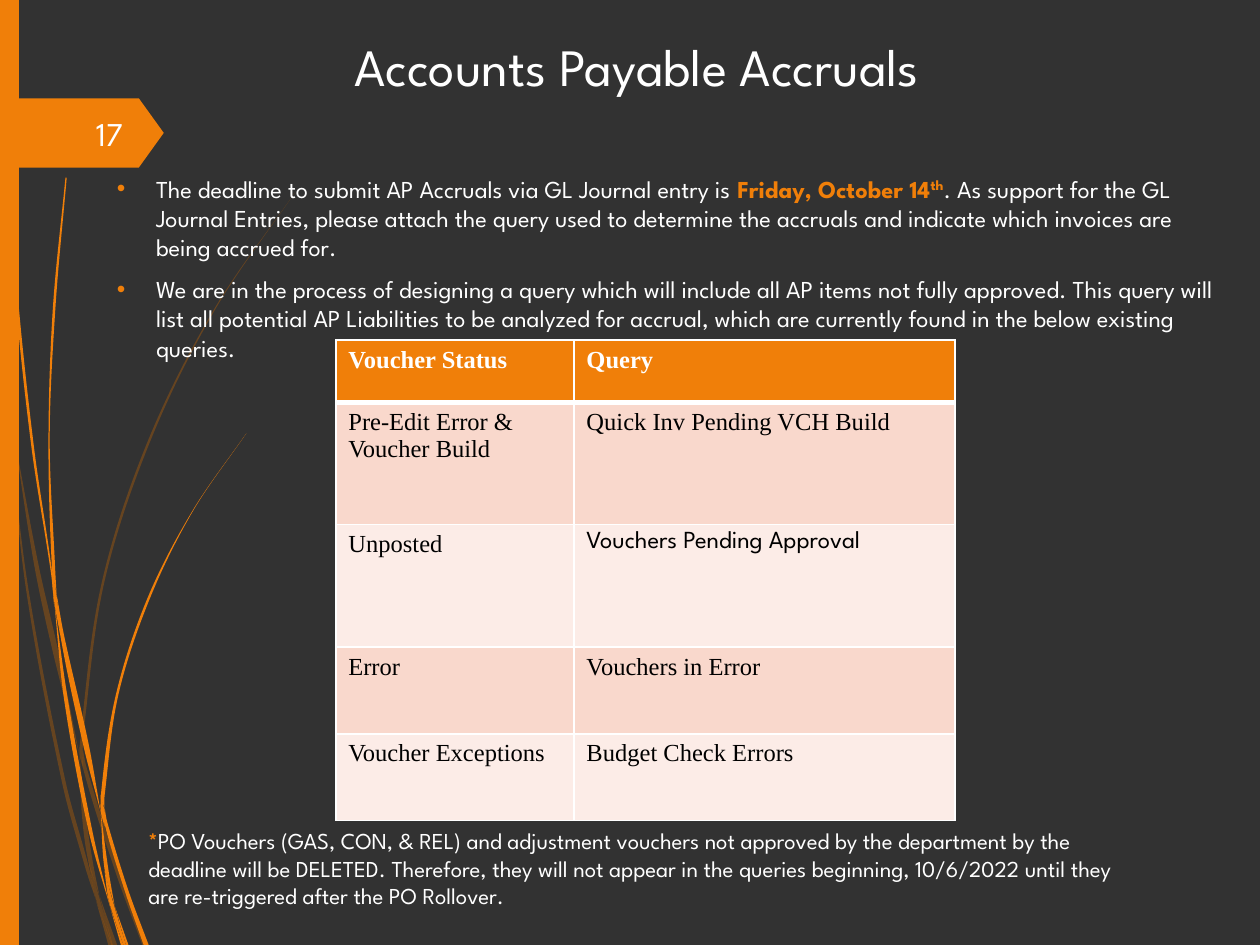
from lxml.etree import Element, SubElement
from pptx import Presentation
from pptx.dml.color import RGBColor
from pptx.enum.shapes import MSO_SHAPE
from pptx.enum.text import MSO_ANCHOR, PP_ALIGN
from pptx.oxml.ns import qn
from pptx.util import Inches, Pt

DARK = RGBColor(0x32, 0x32, 0x32)
ORANGE = RGBColor(0xF0, 0x7F, 0x09)
BROWN = RGBColor(0xB4, 0x5F, 0x07)
WHITE = RGBColor(0xFF, 0xFF, 0xFF)
BLACK = RGBColor(0x00, 0x00, 0x00)
ROSE = RGBColor(0xF9, 0xD8, 0xCC)
BLUSH = RGBColor(0xFC, 0xEC, 0xE7)
SANS, SERIF = "League Spartan", "Times New Roman"
COLS, ROWS = 100, 75

# Each blade of grass: column, row and width of points along its middle.
DIM_GRASS = [
    [(1.1, 34.5, 0), (2.9, 44.9, 0.35), (4.48, 52, 0.45), (6.3, 59.9, 0)],
    [(6.6, 59.6, 0), (6.75, 61, 0.3), (9.35, 69.3, 0.3), (11.45, 75, 0.3)],
    [(7.9, 71.1, 0), (9.1, 75, 0.4)],
    [(0.8, 35, 0), (2.2, 47, 0.2), (5.05, 62, 0.3), (6.9, 68.8, 0.3), (7.6, 71.4, 0)],
    [(6.3, 59.9, 0), (6.65, 64.6, 0.3), (7.18, 68.3, 0.35), (7.9, 71.1, 0)],
    [(23.4, 15.3, 0), (17.1, 24.45, 0.1), (11.9, 34.85, 0.2), (8.2, 46.15, 0.2),
     (6.5, 58.4, 0.2), (6.6, 59.6, 0)],
    [(7.6, 71.4, 0), (8.75, 75, 0.3)],
    [(6.4, 58.6, 0), (6.45, 59.8, 0.3), (6.6, 61, 0)],
    [(7, 68.3, 0), (7.7, 71.1, 0.3), (8.9, 75, 0.1)],
]
BRIGHT_GRASS = [
    [(0.25, 0, 0.1), (0.55, 11, 0.1), (1.3, 23.3, 0.2), (2.6, 35.5, 0.2),
     (4.1, 45.5, 0.1), (4.3, 48.1, 0)],
    [(4.5, 47.2, 0), (4.95, 50.5, 0.3), (6.8, 59, 0.45), (8, 64.5, 0)],
    [(8.3, 64.1, 0), (8.4, 65.3, 0.25), (10.05, 70.7, 0.3), (11.6, 75, 0.4)],
    [(4.3, 47.7, 0), (5.25, 55.6, 0.3), (7.15, 65.8, 0.3), (8.8, 72.2, 0)],
    [(5.25, 14.1, 0.1), (4.3, 24.5, 0.2), (3.9, 34.9, 0.1), (4.25, 45, 0.25),
     (4.5, 47.2, 0)],
    [(9.1, 71.9, 0), (10.1, 75, 0.2)],
    [(4.1, 44.9, 0), (4.4, 47.5, 0.25), (4.8, 50.5, 0)],
    [(19.55, 34.4, 0), (15.3, 40.55, 0.05), (11.8, 47.5, 0.2), (9.3, 55.15, 0.2),
     (8.15, 63.2, 0.3), (8.3, 64.1, 0)],
    [(8.8, 72.2, 0), (9.7, 75, 0.2)],
    [(8, 64.5, 0), (8.45, 69, 0.3), (9.1, 71.9, 0)],
    [(8, 63.1, 0), (8.15, 64.4, 0.3), (8.3, 65.6, 0)],
    [(8.3, 69.1, 0), (8.8, 71.5, 0.3), (9.9, 75, 0.2)],
]
POINTS = [
    [("The deadline to submit AP Accruals via GL Journal entry is ", WHITE),
     ("Friday, October 14", ORANGE), ("th", ORANGE, 30),
     (". As support for the GL Journal Entries, please attach the query used to "
      "determine the accruals and indicate which invoices are being accrued for.",
      WHITE)],
    [("We are in the process of designing a query which will include all AP items "
      "not fully approved. This query will list all potential AP Liabilities to be "
      "analyzed for accrual, which are currently found in the below existing "
      "queries.", WHITE)],
]
NOTE = [("*", ORANGE), (
    "PO Vouchers (GAS, CON, & REL) and adjustment vouchers not approved by the "
    "department by the deadline will be DELETED. Therefore, they will not appear in "
    "the queries beginning, 10/6/2022 until they are re-triggered after the PO "
    "Rollover.", WHITE)]
QUERIES = [("Voucher Status", "Query"),
           ("Pre-Edit Error & Voucher Build", "Quick Inv Pending VCH Build"),
           ("Unposted", "Vouchers Pending Approval"),
           ("Error", "Vouchers in Error"),
           ("Voucher Exceptions", "Budget Check Errors")]


def bend(edge):
    """Return the two Bezier handles of each span of an edge that runs up or down."""
    ends = [edge[0], *edge, edge[-1]]
    slopes = [(c[0] - a[0]) / (c[1] - a[1]) for a, c in zip(ends, ends[2:])]
    spans = []
    for (x, y), (u, v), m, n in zip(edge, edge[1:], slopes, slopes[1:]):
        h = (v - y) / 3
        spans.append([(x + m * h, y + h), (u - n * h, v - h)])
    return spans


class Deck:
    """Holds the style and the current slide; lengths are grid columns and rows."""

    def __init__(self):
        self.prs = Presentation()
        self.prs.slide_width, self.prs.slide_height = Inches(10), Inches(7.5)
        self.slide = self.prs.slides.add_slide(self.prs.slide_layouts[6])
        back = self.slide.background.fill
        back.solid()
        back.fore_color.rgb = DARK

    def x(self, cols):
        return round(self.prs.slide_width * cols / COLS)

    def y(self, rows):
        return round(self.prs.slide_height * rows / ROWS)

    def box(self, left, top, width, height):
        return self.x(left), self.y(top), self.x(width), self.y(height)

    def paint(self, shape, color):
        shape.shadow.inherit = False
        shape.fill.solid()
        shape.fill.fore_color.rgb = color
        shape.line.fill.background()

    def block(self, kind, place, color):
        shape = self.slide.shapes.add_shape(kind, *self.box(*place))
        self.paint(shape, color)
        return shape

    def blade(self, knots, color, alpha=100):
        down = [(self.x(x - w / 2), self.y(y)) for x, y, w in knots]
        up = [(self.x(x + w / 2), self.y(y)) for x, y, w in reversed(knots)]
        pen = self.slide.shapes.build_freeform(*down[0])
        pen.add_line_segments(down[1:] + up, close=True)
        shape = pen.convert_to_shape()
        self.paint(shape, color)
        lines = list(shape._element.iter(qn("a:lnTo")))
        spans = [*bend(down), None, *bend(up)]
        for line, span in zip(lines, spans):
            if span:
                curve = Element(qn("a:cubicBezTo"))
                for x, y in span:
                    SubElement(curve, qn("a:pt"), x=str(round(x - shape.left)),
                               y=str(round(y - shape.top)))
                curve.append(line[0])
                line.getparent().replace(line, curve)
        if alpha < 100:
            tone = shape._element.spPr.find(".//" + qn("a:srgbClr"))
            SubElement(tone, qn("a:alpha"), val=str(alpha * 1000))

    def style(self, run, size, color, bold=False, face=SANS):
        font = run.font
        font.name, font.size, font.bold = face, Pt(size), bold
        font.color.rgb = color

    def text(self, place, paras, size, align=PP_ALIGN.LEFT, anchor=MSO_ANCHOR.TOP):
        """Add a box of paragraphs, each a list of (words, colour[, raise])."""
        frame = self.slide.shapes.add_textbox(*self.box(*place)).text_frame
        frame.word_wrap, frame.vertical_anchor = True, anchor
        for i, parts in enumerate(paras):
            para = frame.add_paragraph() if i else frame.paragraphs[0]
            para.alignment = align
            for words, color, *lift in parts:
                run = para.add_run()
                run.text = words
                self.style(run, size, color, color == ORANGE)
                if lift:
                    run._r.get_or_add_rPr().set("baseline", str(lift[0] * 1000))
        return frame

    def indent(self, para, left, first=0, bullet=None):
        props = para._p.get_or_add_pPr()
        props.set("marL", str(self.x(left)))
        props.set("indent", str(self.x(first)))
        if bullet:
            tone = SubElement(props, qn("a:buClr"))
            SubElement(tone, qn("a:srgbClr"), val=str(ORANGE))
            SubElement(props, qn("a:buFont"), typeface="Arial")
            SubElement(props, qn("a:buChar"), char=bullet)

    def border(self, cell, side, width):
        props = cell._tc.get_or_add_tcPr()
        line = SubElement(props, qn("a:ln" + side), w=str(Pt(width)))
        fill = SubElement(line, qn("a:solidFill"))
        SubElement(fill, qn("a:srgbClr"), val=str(WHITE))

    def table(self, left, top, widths, heights, rows):
        place = self.box(left, top, sum(widths), sum(heights))
        grid = self.slide.shapes.add_table(len(rows), len(widths), *place).table
        for col, width in zip(grid.columns, widths):
            col.width = self.x(width)
        for r, (height, words) in enumerate(zip(heights, rows)):
            grid.rows[r].height = self.y(height)
            for cell, word in zip(grid.rows[r].cells, words):
                cell.text_frame.text = word
                run = cell.text_frame.paragraphs[0].runs[0]
                face = SANS if word == "Vouchers Pending Approval" else SERIF
                self.style(run, 14, BLACK if r else WHITE, r == 0, face)
                for side in "LRTB":
                    self.border(cell, side, 3 if (r, side) in ((0, "B"), (1, "T")) else 1)
                cell.fill.solid()
                cell.fill.fore_color.rgb = (ROSE if r % 2 else BLUSH) if r else ORANGE


def main():
    deck = Deck()
    for knots in DIM_GRASS:
        deck.blade(knots, BROWN, 40)
    for knots in BRIGHT_GRASS:
        deck.blade(knots, ORANGE)
    deck.block(MSO_SHAPE.RECTANGLE, (0, 0, 1.5, ROWS), ORANGE)
    flag = deck.block(MSO_SHAPE.PENTAGON, (0, 7.8, 13, 5.5), ORANGE)
    flag.adjustments[0] = 0.36
    deck.text((4.35, 8.6, 6.4, 4), [[("17", WHITE)]], 19, PP_ALIGN.RIGHT, MSO_ANCHOR.MIDDLE)
    body = deck.text((7.1, 13.3, 91.1, 13.6), POINTS, 13.9)
    for para in body.paragraphs:
        para.space_before = Pt(7.5)
        deck.indent(para, 4.3, -3.1, "•")
    title = deck.text((0, 2.2, COLS, 7.8), [[("Accounts Payable Accruals", WHITE)]],
                      30, PP_ALIGN.CENTER)
    title.margin_left = deck.x(2.1)
    deck.table(26.65, 27, (18.9, 30.25), (4.95, 9.7, 9.7, 6.9, 6.9), QUERIES)
    note = deck.text((9.6, 65.15, 80.8, 7.6), [NOTE], 13)
    deck.indent(note.paragraphs[0], 1.2)
    deck.prs.save("out.pptx")


if __name__ == "__main__":
    main()
